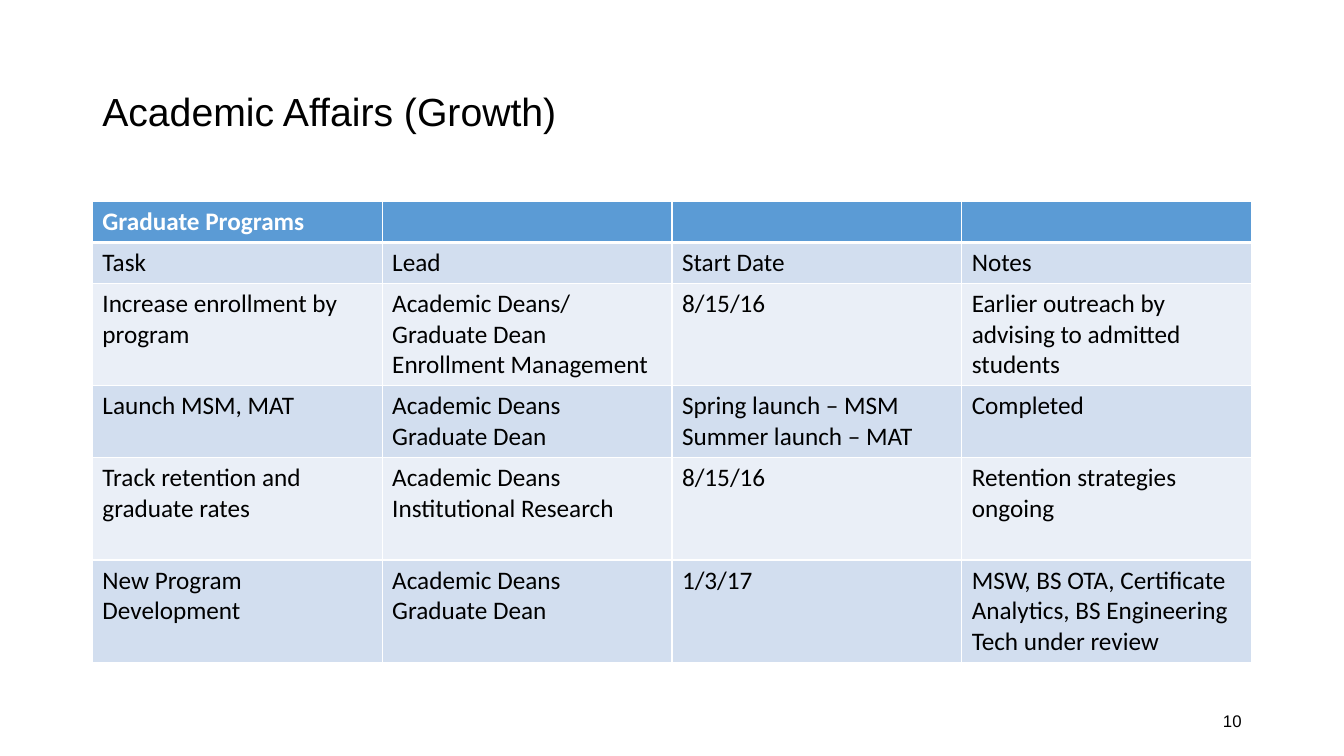
"""Build the Academic Affairs (Growth) slide with its graduate programs table."""
from lxml.etree import SubElement
from pptx import Presentation
from pptx.dml.color import RGBColor
from pptx.enum.text import MSO_ANCHOR as ANCHOR, PP_ALIGN as ALIGN
from pptx.oxml.ns import qn
from pptx.util import Pt

BLACK = RGBColor(0x00, 0x00, 0x00)
WHITE = RGBColor(0xFF, 0xFF, 0xFF)
HEADER = RGBColor(0x5B, 0x9B, 0xD5)
BANDS = (RGBColor(0xEA, 0xEF, 0xF7), RGBColor(0xD2, 0xDE, 0xEF))

LEFT, WIDTH = 66, 828
LINE_HEIGHT, CELL_PADDING = 22, 7.2
LINE_COUNTS = (1, 1, 3, 2, 3, 3)
ROWS = (
    ("Graduate Programs", "", "", ""),
    ("Task", "Lead", "Start Date", "Notes"),
    ("Increase enrollment by program",
     "Academic Deans/\nGraduate Dean\nEnrollment Management",
     "8/15/16", "Earlier outreach by advising to admitted students"),
    ("Launch MSM, MAT", "Academic Deans\nGraduate Dean",
     "Spring launch – MSM\nSummer launch – MAT", "Completed"),
    ("Track retention and graduate rates",
     "Academic Deans\nInstitutional Research",
     "8/15/16", "Retention strategies ongoing"),
    ("New Program Development", "Academic Deans\nGraduate Dean", "1/3/17",
     "MSW, BS OTA, Certificate Analytics, BS Engineering Tech under review"),
)


def add_run(p, text, size, font, color, bold=False):
    """Add one formatted run to a paragraph."""
    r = p.add_run()
    r.text = text
    r.font.size = Pt(size)
    r.font.name = font
    r.font.bold = bold
    r.font.color.rgb = color


def add_text(s, box, text, size, align=ALIGN.LEFT, spacing=1.0):
    """Add a vertically centred line of text."""
    tf = s.shapes.add_textbox(*map(Pt, box)).text_frame
    tf.word_wrap = True
    tf.vertical_anchor = ANCHOR.MIDDLE
    p = tf.paragraphs[0]
    p.alignment = align
    p.line_spacing = spacing
    add_run(p, text, size, "Arial", BLACK)


def set_borders(cell, top, bottom):
    """Give a cell white borders of the given top and bottom widths."""
    tc_pr = cell._tc.get_or_add_tcPr()
    for side, width in (("L", 1), ("R", 1), ("T", top), ("B", bottom)):
        line = SubElement(tc_pr, qn(f"a:ln{side}"), w=str(Pt(width)))
        fill = SubElement(line, qn("a:solidFill"))
        SubElement(fill, qn("a:srgbClr"), val=str(WHITE))


def fill_cell(cell, text, row):
    """Set the borders, fill and text of a cell by its row number."""
    is_header = row == 0
    set_borders(cell, 3 if row == 1 else 1, 3 if is_header else 1)
    cell.fill.solid()
    cell.fill.fore_color.rgb = HEADER if is_header else BANDS[row % 2]
    tf = cell.text_frame
    for i, line in enumerate(text.split("\n") if text else ()):
        p = tf.add_paragraph() if i else tf.paragraphs[0]
        add_run(p, line, 18, "Calibri", WHITE if is_header else BLACK, is_header)


def add_task_table(s, top):
    """Add the table of tasks, leads, dates and notes."""
    heights = [n * LINE_HEIGHT + CELL_PADDING for n in LINE_COUNTS]
    table = s.shapes.add_table(len(ROWS), len(ROWS[0]), Pt(LEFT), Pt(top),
                               Pt(WIDTH), Pt(sum(heights))).table
    table.horz_banding = False
    for row, (texts, height) in enumerate(zip(ROWS, heights)):
        table.rows[row].height = Pt(height)
        for col, text in enumerate(texts):
            fill_cell(table.cell(row, col), text, row)


def main():
    """Build and save the slide."""
    prs = Presentation()
    prs.slide_width, prs.slide_height = Pt(960), Pt(540)
    s = prs.slides.add_slide(prs.slide_layouts[6])
    add_text(s, (LEFT, 28.75, WIDTH, 104.4), "Academic Affairs (Growth)", 28,
             spacing=0.9)
    add_task_table(s, 144)
    add_text(s, (678, 500.5, 216, 28.75), "10", 12, ALIGN.RIGHT)
    prs.save("out.pptx")


if __name__ == "__main__":
    main()
